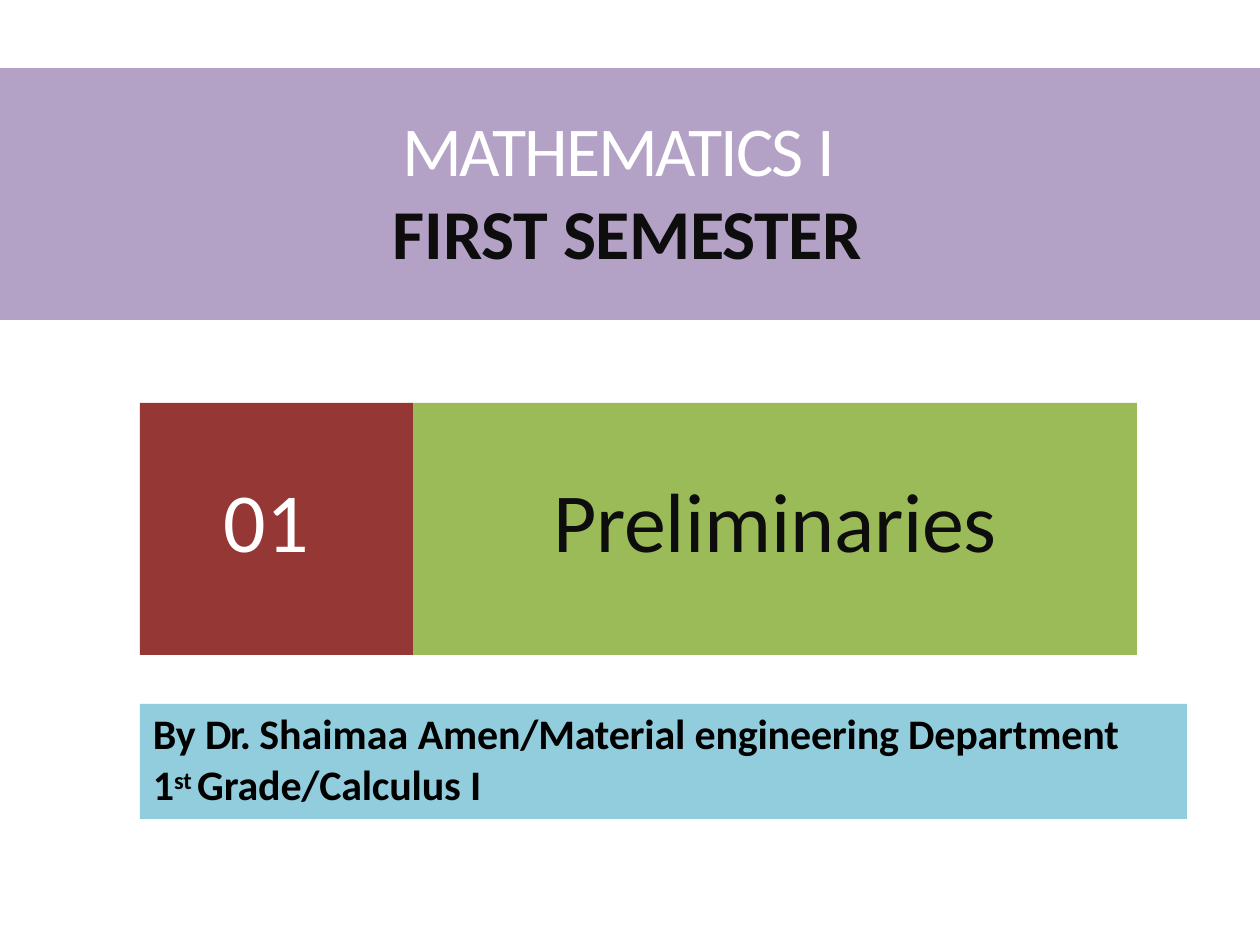
import pptx
import pptx.dml.color
import pptx.enum.shapes
import pptx.enum.text
import pptx.util

RGB = pptx.dml.color.RGBColor
Pt = pptx.util.Pt
ALIGN = pptx.enum.text.PP_ALIGN

WHITE = RGB(0xFF, 0xFF, 0xFF)
BLACK = RGB(0, 0, 0)
INK = RGB(0x0D, 0x0D, 0x0D)
PURPLE = RGB(0xB3, 0xA1, 0xC6)
GREEN = RGB(0x9B, 0xBA, 0x58)
RED = RGB(0x94, 0x37, 0x35)
CYAN = RGB(0x92, 0xCD, 0xDD)


def px(length):
    """Turn whole px (126 to the inch) into EMU."""
    return round(length * 914400 / 126)


class SlideBuilder:
    font_name = "Calibri"

    def __init__(self, deck):
        self.slide = deck.slides.add_slide(deck.slide_layouts[5])

    def title(self, left, top, width, height):
        box = self.slide.shapes.title
        frame = {"left": left, "top": top, "width": width, "height": height}
        for name, value in frame.items():
            setattr(box, name, px(value))
        return box

    def band(self, left, top, width, height, color):
        """Draw a plain filled outline without text."""
        builder = self.slide.shapes.build_freeform(px(left), px(top))
        right, bottom = left + width, top + height
        corners = [(right, top), (right, bottom), (left, bottom)]
        builder.add_line_segments([(px(x), px(y)) for x, y in corners])
        return self.paint(builder.convert_to_shape(), color)

    def block(self, left, top, width, height, color):
        kind = pptx.enum.shapes.MSO_SHAPE.RECTANGLE
        box = self.slide.shapes.add_shape(
            kind, px(left), px(top), px(width), px(height))
        return self.paint(box, color)

    def paint(self, box, color):
        box.shadow.inherit = False
        box.fill.solid()
        box.fill.fore_color.rgb = color
        box.line.fill.background()
        return box

    def text(self, box, lines, inset):
        """Fill a shape with (paragraph format, indent, runs) lines."""
        frame = box.text_frame
        settings = {
            "margin_left": 0, "margin_right": 0, "margin_bottom": 0,
            "margin_top": px(inset), "word_wrap": True,
            "auto_size": pptx.enum.text.MSO_AUTO_SIZE.NONE,
            "vertical_anchor": pptx.enum.text.MSO_ANCHOR.TOP,
        }
        for name, value in settings.items():
            setattr(frame, name, value)
        for index, (layout, indent, runs) in enumerate(lines):
            para = frame.paragraphs[0] if index == 0 else frame.add_paragraph()
            layout = {"alignment": ALIGN.LEFT, "space_before": Pt(0), **layout}
            for name, value in layout.items():
                setattr(para, name, value)
            properties = para._p.get_or_add_pPr()
            properties.set("marL", str(px(indent)))
            properties.set("indent", "0")
            for wording, style, extra in runs:
                self.span(para, wording, style, extra)

    def span(self, para, wording, style, extra):
        """Add a run; extra holds spacing and baseline attributes."""
        span = para.add_run()
        span.text = wording
        span.font.color.rgb = style["color"]
        settings = {"name": self.font_name, "size": Pt(style["size"]),
                    "bold": style.get("bold", False)}
        for name, value in settings.items():
            setattr(span.font, name, value)
        for name, value in extra.items():
            span.font._element.set(name, str(value))


def main():
    deck = pptx.Presentation()
    deck.slide_width, deck.slide_height = px(1260), px(945)
    page = SlideBuilder(deck)

    # Course title on its band; the band goes behind the title
    band = page.band(0, 68, 1260, 252, PURPLE)
    title = page.title(392, 105, 474, 171)
    band._element.getparent().insert(2, band._element)
    light = {"size": 40, "color": WHITE}
    strong = {"size": 40, "color": INK, "bold": True}
    leading = {"line_spacing": Pt(48)}
    page.text(title, [
        ({**leading, "space_before": Pt(0.9)}, 10,
         [("MATHEMATICS ", light, {"spc": -120}), ("I", light, {"spc": -10})]),
        (leading, 1,
         [("FIRST ", strong, {"spc": -20}),
          ("SEMESTER", strong, {"spc": -30})]),
    ], 1)

    # Chapter name and number
    chapter = page.block(412, 403, 725, 252, GREEN)
    page.text(chapter, [({"alignment": ALIGN.CENTER}, 1, [
        ("Preliminaries", {"size": 48, "color": INK}, {"spc": -10})])], 66)
    number = page.block(140, 403, 273, 252, RED)
    page.text(number, [({}, 84, [
        ("01", {"size": 48, "color": WHITE}, {})])], 66)

    # Lecturer and grade
    credit = page.block(140, 704, 1047, 115, CYAN)
    bold = {"size": 24, "color": BLACK, "bold": True}
    tight = {"spc": -10}
    leading = {"line_spacing": Pt(28.7)}
    page.text(credit, [
        ({**leading, "space_before": Pt(2.4)}, 13,
         [("By ", bold, tight), ("Dr. ", bold, {"spc": -80}),
          ("Shaimaa ", bold, {}),
          ("Amen/Material engineering Department", bold, tight)]),
        (leading, 13,
         [("1", bold, tight), ("st ", bold, {**tight, "baseline": 24000}),
          ("Grade/Calculus ", bold, tight), ("I", bold, {})]),
    ], 4)

    deck.save("out.pptx")


if __name__ == "__main__":
    main()
